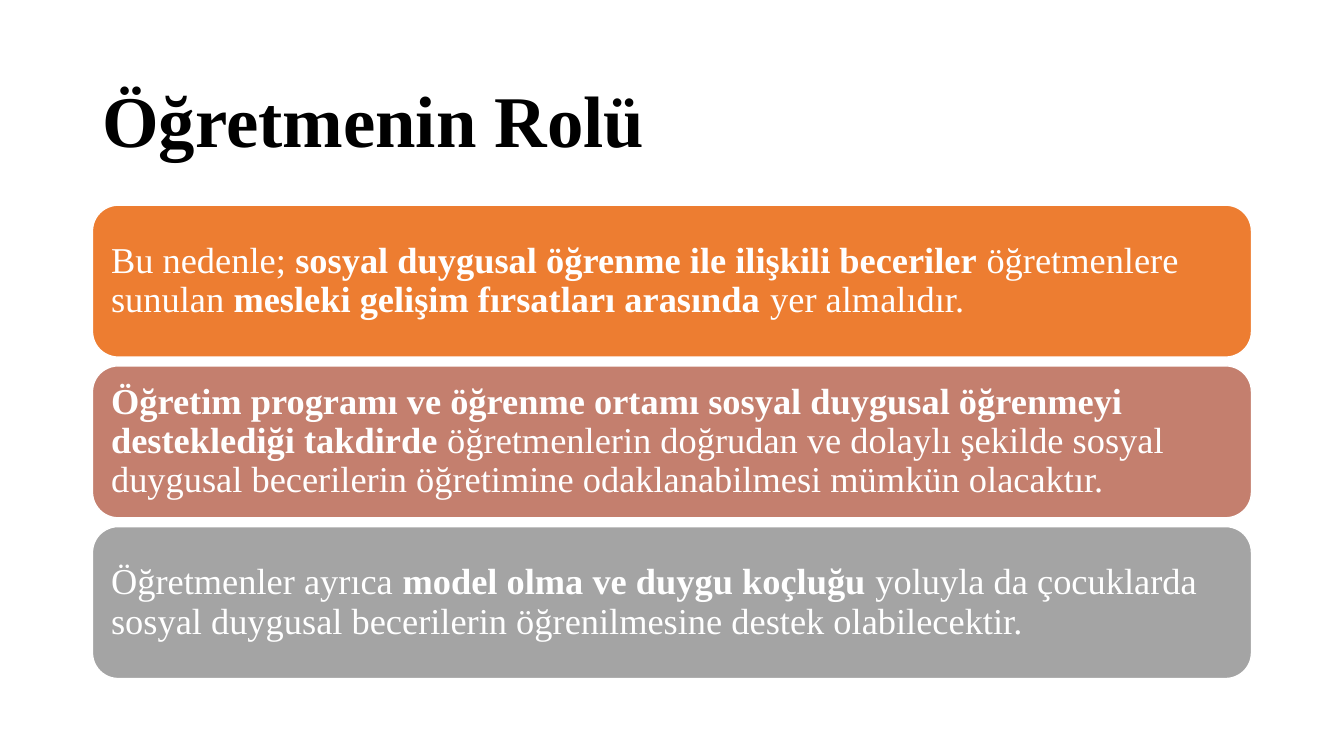
from dataclasses import dataclass

from pptx import Presentation
from pptx.dml.color import RGBColor
from pptx.enum.shapes import MSO_SHAPE
from pptx.enum.text import MSO_ANCHOR, PP_ALIGN
from pptx.slide import Slide
from pptx.text.text import TextFrame
from pptx.util import Cm, Pt

COLOURS = {
    "black": "000000",
    "white": "FFFFFF",
    "orange": "ED7D31",
    "rose": "C47F6E",
    "grey": "A4A4A4",
}
FONT = "Times New Roman"
LEFT, WIDTH = 2.33, 29.21
CARD_TOP, CARD_HEIGHT, CARD_STEP = 5.17, 3.83, 4.05


@dataclass(frozen=True)
class Span:
    text: str
    bold: bool = False


@dataclass(frozen=True)
class Card:
    fill: str
    spans: tuple[Span, ...]


CARDS = (
    Card("orange", (
        Span("Bu nedenle; "),
        Span("sosyal duygusal öğrenme ile ilişkili beceriler ", True),
        Span("öğretmenlere sunulan "),
        Span("mesleki gelişim fırsatları arasında ", True),
        Span("yer almalıdır."),
    )),
    Card("rose", (
        Span("Öğretim programı ve öğrenme ortamı sosyal duygusal öğrenmeyi "
             "desteklediği takdirde ", True),
        Span("öğretmenlerin doğrudan ve dolaylı şekilde sosyal duygusal "
             "becerilerin öğretimine odaklanabilmesi mümkün olacaktır."),
    )),
    Card("grey", (
        Span("Öğretmenler ayrıca "),
        Span("model olma ve duygu koçluğu ", True),
        Span("yoluyla da çocuklarda sosyal duygusal becerilerin "
             "öğrenilmesine destek olabilecektir."),
    )),
)


def colour(name: str) -> RGBColor:
    return RGBColor.from_string(COLOURS[name])


def write_text(frame: TextFrame, spans: tuple[Span, ...], size: int,
               colour_name: str, side: float, edge: float) -> None:
    frame.word_wrap = True
    frame.vertical_anchor = MSO_ANCHOR.MIDDLE
    frame.margin_left = frame.margin_right = Cm(side)
    frame.margin_top = frame.margin_bottom = Cm(edge)
    para = frame.paragraphs[0]
    para.alignment = PP_ALIGN.LEFT
    para.line_spacing = 0.9
    for span in spans:
        run = para.add_run()
        run.text = span.text
        run.font.name = FONT
        run.font.size = Pt(size)
        run.font.bold = span.bold
        run.font.color.rgb = colour(colour_name)


def add_title(page: Slide) -> None:
    title = page.shapes.title
    title.left, title.top = Cm(LEFT), Cm(1.54)
    title.width, title.height = Cm(WIDTH), Cm(3.15)
    write_text(title.text_frame, (Span("Öğretmenin Rolü", True),),
               52, "black", 0.25, 0.13)


def add_card(page: Slide, card: Card, top: float) -> None:
    box = page.shapes.add_shape(MSO_SHAPE.ROUNDED_RECTANGLE, Cm(LEFT), Cm(top),
                                Cm(WIDTH), Cm(CARD_HEIGHT))
    box.adjustments[0] = 0.17
    box.shadow.inherit = False
    box.fill.solid()
    box.fill.fore_color.rgb = colour(card.fill)
    box.line.color.rgb = colour("white")
    box.line.width = Pt(1)
    write_text(box.text_frame, card.spans, 26, "white", 0.28, 0.28)


def main() -> None:
    deck = Presentation()
    deck.slide_width, deck.slide_height = Cm(33.87), Cm(19.05)
    page = deck.slides.add_slide(deck.slide_layouts[5])
    add_title(page)
    for index, card in enumerate(CARDS):
        add_card(page, card, CARD_TOP + index * CARD_STEP)
    deck.save("out.pptx")


if __name__ == "__main__":
    main()
